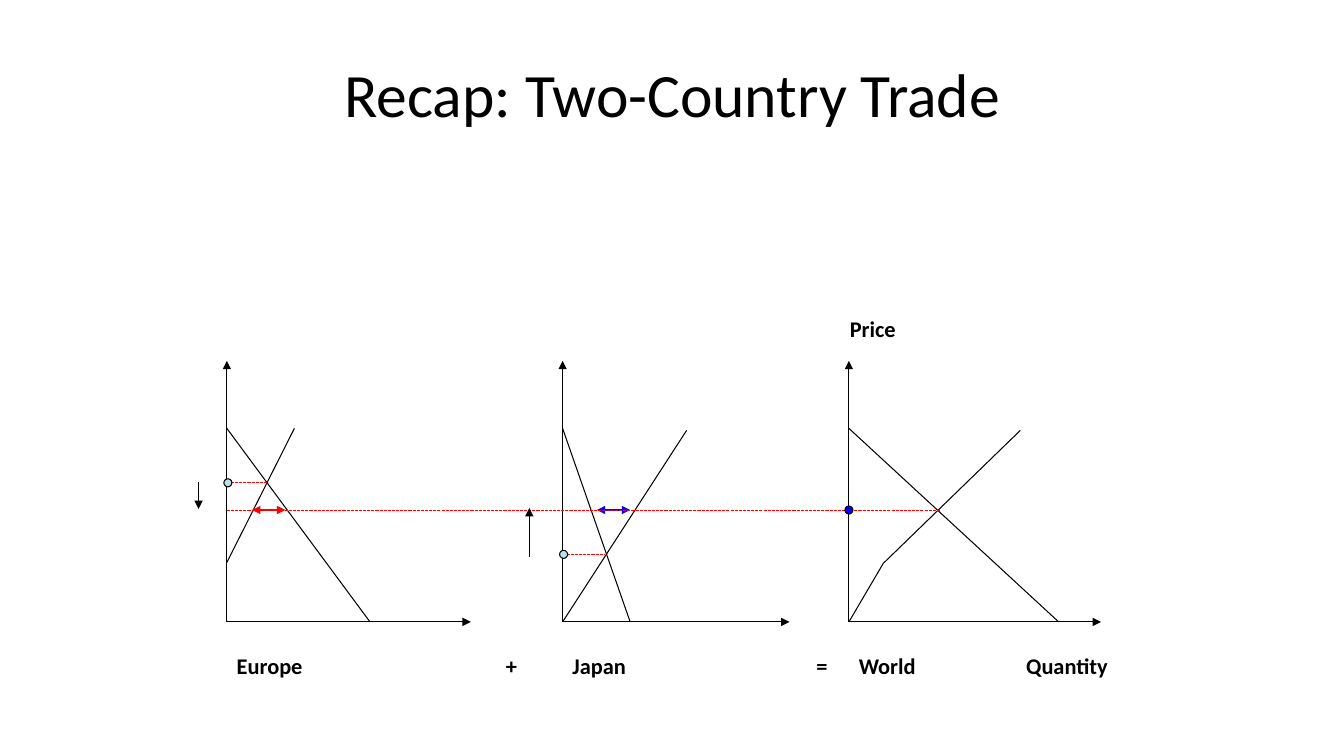
from lxml import etree
from pptx import Presentation
from pptx.dml.color import RGBColor
from pptx.enum.dml import MSO_LINE
from pptx.enum.shapes import MSO_CONNECTOR, MSO_SHAPE
from pptx.enum.text import MSO_ANCHOR, PP_ALIGN
from pptx.oxml.ns import qn
from pptx.util import Inches, Pt

STRAIGHT = MSO_CONNECTOR.STRAIGHT
OVAL = MSO_SHAPE.OVAL
DOTTED = MSO_LINE.SQUARE_DOT
MIDDLE, TOP = MSO_ANCHOR.MIDDLE, MSO_ANCHOR.TOP
CENTER, LEFT = PP_ALIGN.CENTER, PP_ALIGN.LEFT
BLACK, RED, BLUE, PALE = "000000", "FF0000", "0000FF", "BBE0E3"


def color(value):
    return RGBColor.from_string(value)


def apply(target, values):
    for name, value in values.items():
        setattr(target, name, value)


class TradeSlide:
    """Draws the lines, dots and labels of a market diagram on one slide."""

    font_name = "Calibri"
    dot_size = 0.08

    def __init__(self, slide):
        self.shapes = slide.shapes

    def line(self, start, end, stroke=BLACK, width=0.75, dash=None, ends=()):
        points = [Inches(value) for value in (*start, *end)]
        connector = self.shapes.add_connector(STRAIGHT, *points)
        apply(connector.line, {"width": Pt(width), "dash_style": dash})
        connector.line.color.rgb = color(stroke)
        outline = connector.line._get_or_add_ln()
        for end_name in ends:
            etree.SubElement(outline, qn(f"a:{end_name}"), type="triangle")
        etree.SubElement(connector._element.spPr, qn("a:effectLst"))

    def arrow(self, start, end):
        self.line(start, end, ends=("tailEnd",))

    def gap(self, left, right, y, stroke):
        self.line((left, y), (right, y), stroke, 1, ends=("headEnd", "tailEnd"))

    def price_line(self, left, right, y):
        self.line((left, y), (right, y), RED, dash=DOTTED)

    def dot(self, x, y, fill):
        size = Inches(self.dot_size)
        corner = (Inches(value - self.dot_size / 2) for value in (x, y))
        dot = self.shapes.add_shape(OVAL, *corner, size, size)
        dot.shadow.inherit = False
        dot.fill.solid()
        dot.fill.fore_color.rgb = color(fill)
        dot.line.color.rgb = color(BLACK)
        dot.line.width = Pt(0.75)

    def text(self, words, box, size=16, bold=True, anchor=TOP, align=LEFT):
        frame = self.shapes.add_textbox(*map(Inches, box)).text_frame
        apply(frame, {"word_wrap": True, "vertical_anchor": anchor})
        paragraph = frame.paragraphs[0]
        paragraph.alignment = align
        run = paragraph.add_run()
        run.text = words
        apply(run.font, {"name": self.font_name, "size": Pt(size), "bold": bold})
        run.font.color.rgb = color(BLACK)

    def label(self, words, x, y, width):
        self.text(words, (x, y, width, 0.37))


def main():
    deck = Presentation()
    apply(deck, {"slide_width": Inches(13.33), "slide_height": Inches(7.5)})
    trade = TradeSlide(deck.slides.add_slide(deck.slide_layouts[6]))

    axis_top, demand_top, base, caption_y = 3.58, 4.25, 6.17, 6.42
    world_price = 5.06
    europe, japan, world = 2.25, 5.58, 8.42

    markets = [
        ("Europe", europe, 4.67, 3.67, [(europe, 5.58), (2.92, 4.25)]),
        ("Japan", japan, 7.83, 6.25, [(japan, base), (6.81, 4.27)]),
        ("World", world, 10.92, 10.5, [(world, base), (8.76, 5.59), (10.12, 4.27)]),
    ]
    for country, origin, axis_end, demand_end, supply in markets:
        trade.arrow((origin, base), (origin, axis_top))
        trade.arrow((origin, base), (axis_end, base))
        trade.line((origin, demand_top), (demand_end, base))
        for start, end in zip(supply, supply[1:]):
            trade.line(start, end)
        trade.label(country, origin, caption_y, 1)

    for sign, x in (("+", 4.92), ("=", 8)):
        trade.label(sign, x, caption_y, 0.33)
    trade.label("Price", 8.33, 3.08, 0.83)
    trade.label("Quantity", 10.08, caption_y, 1.33)

    trade.gap(2.5, 2.83, world_price, RED)
    trade.gap(5.92, 6.25, world_price, BLUE)

    for origin, crossing, price, fill in (
        (japan, 5.99, 5.5, PALE),
        (europe, 2.65, 4.79, PALE),
    ):
        trade.price_line(origin, crossing, price)
        trade.dot(origin + 0.01, price, fill)
    trade.price_line(europe, 9.33, world_price)
    trade.dot(world, world_price, BLUE)

    trade.arrow((1.97, 4.78), (1.97, 5.05))
    trade.arrow((5.25, 5.53), (5.25, 5.04))

    trade.text("Recap: Two-Country Trade", (0.67, 0.3, 12, 1.25), 44, False, MIDDLE, CENTER)
    deck.save("out.pptx")


if __name__ == "__main__":
    main()
